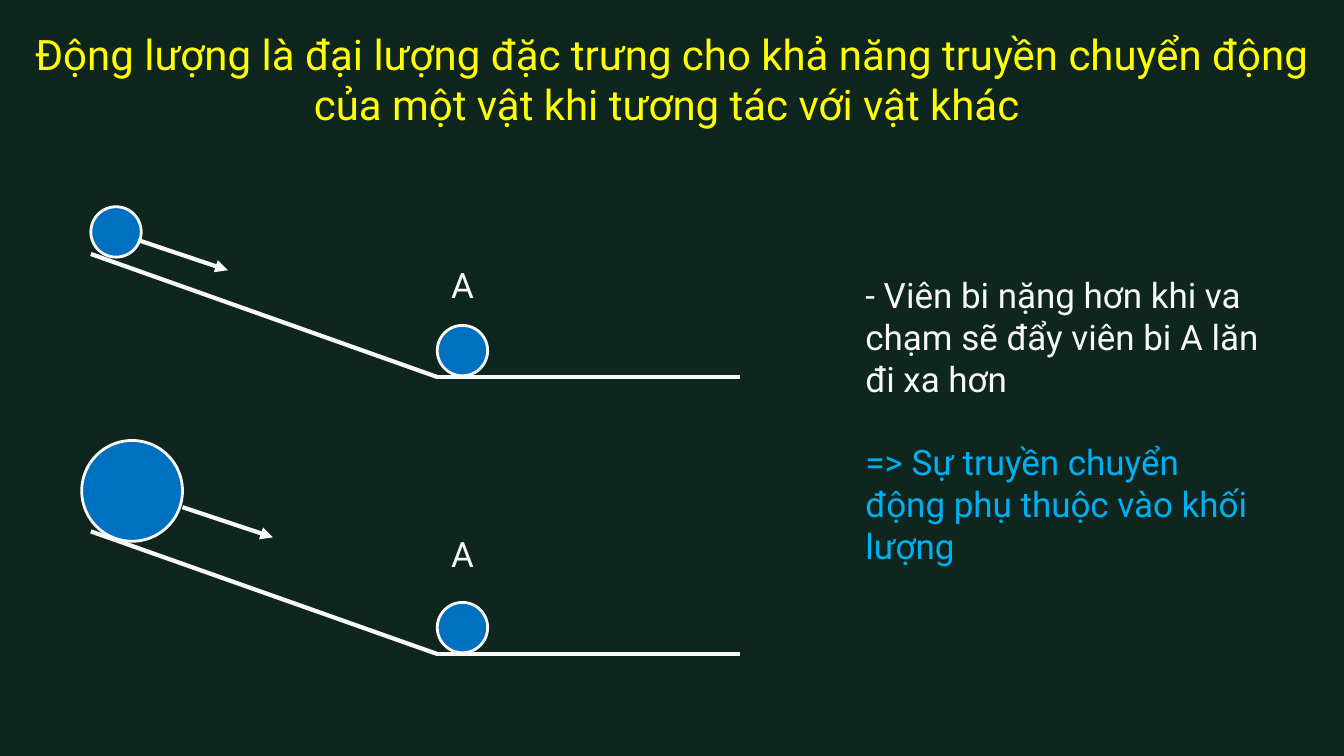
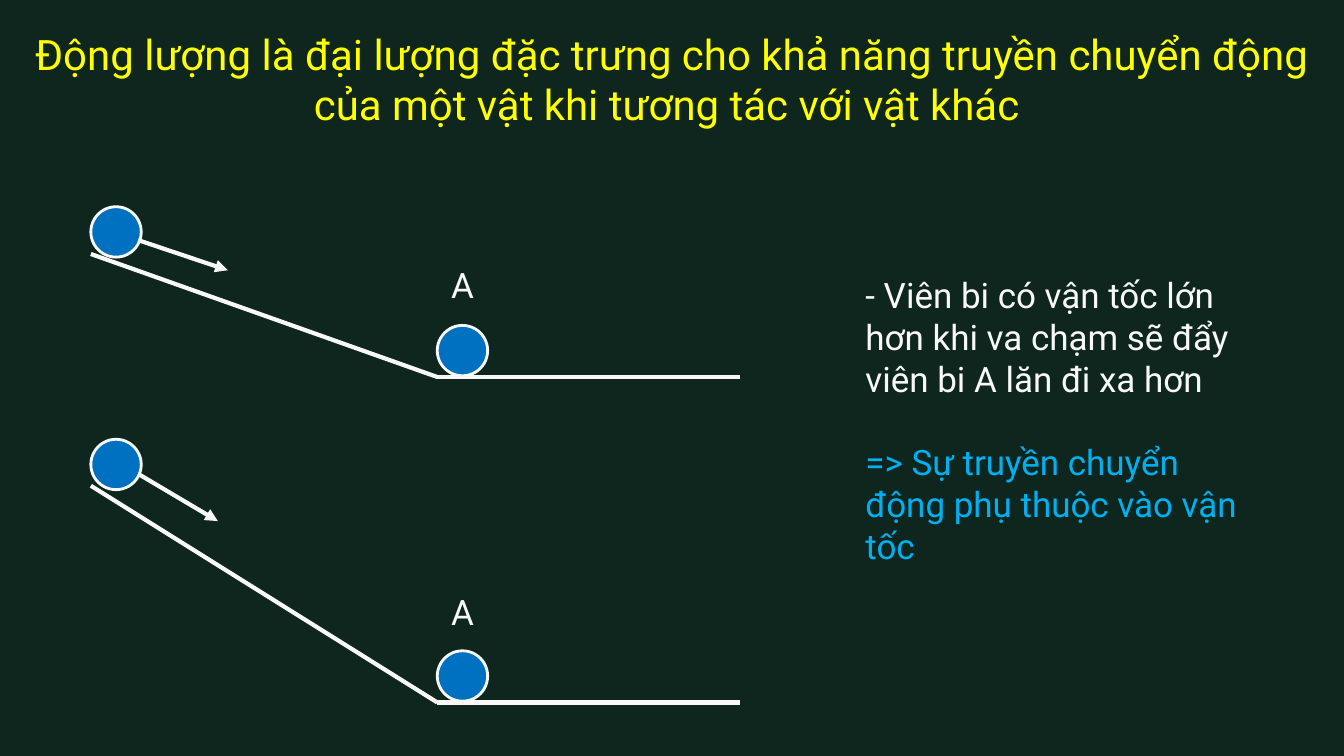
from lxml import etree
from pptx import Presentation
from pptx.dml.color import RGBColor
from pptx.enum.shapes import MSO_CONNECTOR, MSO_SHAPE
from pptx.enum.text import MSO_ANCHOR, MSO_AUTO_SIZE, PP_ALIGN
from pptx.oxml.ns import qn
from pptx.util import Cm, Pt

LEFT, CENTER = PP_ALIGN.LEFT, PP_ALIGN.CENTER
TOP, NO_FIT = MSO_ANCHOR.TOP, MSO_AUTO_SIZE.NONE
OVAL, STRAIGHT = MSO_SHAPE.OVAL, MSO_CONNECTOR.STRAIGHT

GREEN = RGBColor(0x0E, 0x26, 0x1E)
YELLOW = RGBColor(0xFF, 0xFF, 0x00)
WHITE = RGBColor(0xF8, 0xF8, 0xF8)
BLUE = RGBColor(0x00, 0x70, 0xC0)
SKY = RGBColor(0x00, 0xB0, 0xF0)
FONT = "Roboto"

TITLE = ("Động lượng là đại lượng đặc trưng cho khả năng truyền chuyển động "
         "của một vật khi tương tác với vật khác ")

# All lengths are in centimetres.
TITLE_BOX = (0.43, 0.38, 33.02, 1.78)
NOTE_BOX = (21.56, 6.63, 10.41, 1.78)
START, FOOT, END = 2.29, 11.02, 18.64
SMALL, LABEL_H = 1.27, 1.78
LIFT = 1.3  # from the floor up to the top of ball A

# ball: left, top, diameter; arrow: from x, y to x, y
LIGHT = dict(top=6.4, floor=9.5, ball=(START, 5.21, SMALL),
             arrow=(3.48, 6.05, 5.74, 6.81), label=6.4)
HEAVY = dict(top=13.39, floor=16.48, ball=(2.06, 11.1, 2.54),
             arrow=(4.6, 12.78, 6.88, 13.54), label=13.16)
STEEP = dict(top=12.24, floor=17.7, ball=(START, 11.07, SMALL),
             arrow=(3.48, 11.94, 5.49, 13.13), label=14.63)

SLIDES = [
    ("- Viên bi nặng hơn khi va chạm sẽ đẩy viên bi A lăn đi xa hơn",
     "=> Sự truyền chuyển động phụ thuộc vào khối lượng",
     (LIGHT, HEAVY)),
    ("- Viên bi có vận tốc lớn hơn khi va chạm sẽ đẩy viên bi A lăn đi xa hơn",
     "=> Sự truyền chuyển động phụ thuộc vào vận tốc",
     (LIGHT, STEEP)),
]


def write(shape, box, *lines, size=25, align=LEFT, inset=0.25, gap=30):
    """Place a text shape and fill it with (text, colour) paragraphs."""
    shape.left, shape.top, shape.width, shape.height = map(Cm, box)
    frame = shape.text_frame
    frame.word_wrap, frame.auto_size = True, NO_FIT
    frame.vertical_anchor = TOP
    frame.margin_left = frame.margin_right = Cm(inset)
    frame.margin_top = frame.margin_bottom = Cm(inset)
    for i, (text, color) in enumerate(lines):
        para = frame.add_paragraph() if i else frame.paragraphs[0]
        para.alignment = align
        para.line_spacing = 1.0
        para.space_before = Pt(gap if i else 0)
        props = para._p.get_or_add_pPr()
        props.set("marL", "0")
        props.set("indent", "0")
        etree.SubElement(props, qn("a:buNone"))
        run = para.add_run()
        run.text = text
        run.font.name, run.font.size = FONT, Pt(size)
        run.font.color.rgb = color


def draw_line(slide, ends, arrow=False):
    line = slide.shapes.add_connector(STRAIGHT, *map(Cm, ends))
    line.line.color.rgb, line.line.width = WHITE, Pt(3)
    if arrow:
        tip = etree.SubElement(line.line._get_or_add_ln(), qn("a:tailEnd"))
        tip.set("type", "triangle")
    etree.SubElement(line._element.spPr, qn("a:effectLst"))


def draw_ball(slide, left, top, size):
    ball = slide.shapes.add_shape(OVAL, *map(Cm, (left, top, size, size)))
    ball.shadow.inherit = False
    ball.fill.solid()
    ball.fill.fore_color.rgb = BLUE
    ball.line.color.rgb, ball.line.width = WHITE, Pt(2)


def draw_ramp(slide, top, floor, ball, arrow, label):
    draw_line(slide, (START, top, FOOT, floor))
    draw_line(slide, (FOOT, floor, END, floor))
    draw_ball(slide, *ball)
    draw_ball(slide, FOOT, floor - LIFT, SMALL)
    box = (FOOT, label, SMALL, LABEL_H)
    name = slide.shapes.add_textbox(*map(Cm, box))
    write(name, box, ("A", WHITE), align=CENTER)
    draw_line(slide, arrow, arrow=True)


def main():
    prs = Presentation()
    prs.slide_width, prs.slide_height = Cm(33.87), Cm(19.05)
    back = prs.slide_master.background.fill
    back.solid()
    back.fore_color.rgb = GREEN
    for cause, result, ramps in SLIDES:
        slide = prs.slides.add_slide(prs.slide_layouts[1])
        write(slide.shapes.title, TITLE_BOX, (TITLE, YELLOW),
              size=30, align=CENTER, inset=0.33)
        write(slide.placeholders[1], NOTE_BOX, (cause, WHITE), (result, SKY))
        for ramp in ramps:
            draw_ramp(slide, **ramp)
    prs.save("out.pptx")


if __name__ == "__main__":
    main()
